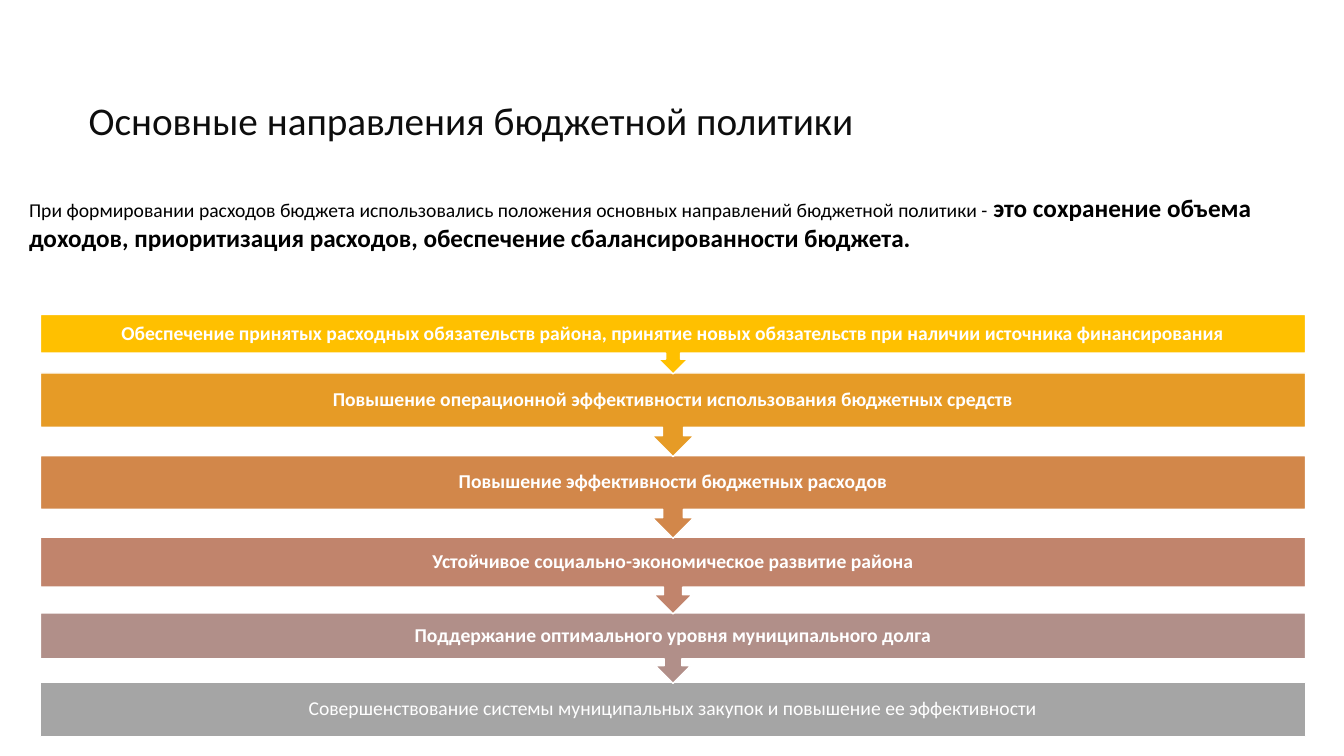
from pptx import Presentation
from pptx.dml.color import RGBColor
from pptx.enum.shapes import MSO_SHAPE
from pptx.enum.text import MSO_ANCHOR, MSO_AUTO_SIZE, PP_ALIGN
from pptx.util import Inches, Pt

TITLE = "Основные направления бюджетной политики"
INTRO = (
    "При формировании расходов бюджета использовались положения "
    "основных направлений бюджетной политики - "
)
GOALS = (
    "это сохранение объема доходов, приоритизация расходов, "
    "обеспечение сбалансированности бюджета."
)
STEPS = [
    ("Обеспечение принятых расходных обязательств района, принятие новых "
     "обязательств при наличии источника финансирования", 3.12, 0.59, "FFC000"),
    ("Повышение операционной эффективности использования бюджетных средств",
     3.7, 0.83, "E69B26"),
    ("Повышение эффективности бюджетных расходов", 4.52, 0.82, "D2874A"),
    ("Устойчивое социально-экономическое развитие района", 5.33, 0.76, "C1846C"),
    ("Поддержание оптимального уровня муниципального долга", 6.08, 0.7, "B18F89"),
]
LAST_STEP = (
    "Совершенствование системы муниципальных закупок и повышение ее эффективности",
    6.77, 0.54, "A5A5A5",
)
STEP_LEFT, STEP_WIDTH = 0.4, 12.55
CALLOUT_BODY_SHARE = 0.65


def color(hex_value):
    """Turn a hex string into a colour."""
    return RGBColor.from_string(hex_value)


class PolicySlide:
    """Holds the style and the current slide."""

    font_name = "Calibri"
    white, black, title_color = "FFFFFF", "000000", "0D0D0D"

    def __init__(self, presentation):
        """Add a title-only slide."""
        self.slide = presentation.slides.add_slide(presentation.slide_layouts[5])

    def style(self, font, size, hex_value, bold=False):
        """Apply the slide font to a paragraph or run."""
        font.name = self.font_name
        font.size = Pt(size)
        font.bold = bold
        font.color.rgb = color(hex_value)

    def title(self, text, left, top, width, height):
        """Place and format the title placeholder."""
        shape = self.slide.shapes.title
        shape.left, shape.top = Inches(left), Inches(top)
        shape.width, shape.height = Inches(width), Inches(height)
        frame = shape.text_frame
        frame.text = text
        frame.auto_size = MSO_AUTO_SIZE.NONE
        frame.vertical_anchor = MSO_ANCHOR.TOP
        paragraph = frame.paragraphs[0]
        paragraph.alignment = PP_ALIGN.CENTER
        self.style(paragraph.font, 28, self.title_color)

    def text_box(self, left, top, width, height):
        """Add a wrapping text box and return its frame."""
        shape = self.slide.shapes.add_textbox(
            Inches(left), Inches(top), Inches(width), Inches(height))
        shape.text_frame.word_wrap = True
        return shape.text_frame

    def intro(self, text, goals, left, top, width, height):
        """Add the opening sentence with its bold ending."""
        paragraph = self.text_box(left, top, width, height).paragraphs[0]
        for part, size, bold in ((text, 14, False), (goals, 18, True)):
            run = paragraph.add_run()
            run.text = part
            self.style(run.font, size, self.black, bold)

    def step(self, text, top, height, fill, last=False):
        """Add one bar of the chain, with a down arrow unless it is the last."""
        kind = MSO_SHAPE.RECTANGLE if last else MSO_SHAPE.UP_ARROW_CALLOUT
        shape = self.slide.shapes.add_shape(
            kind, Inches(STEP_LEFT), Inches(top), Inches(STEP_WIDTH), Inches(height))
        shape.rotation = 0 if last else 180
        shape.shadow.inherit = False
        shape.fill.solid()
        shape.fill.fore_color.rgb = color(fill)
        shape.line.color.rgb = color(self.white)
        shape.line.width = Pt(1)

        body_height = height if last else height * CALLOUT_BODY_SHARE
        frame = self.text_box(STEP_LEFT, top, STEP_WIDTH, body_height)
        frame.vertical_anchor = MSO_ANCHOR.MIDDLE
        frame.margin_left = frame.margin_right = Inches(0.11)
        frame.margin_top = frame.margin_bottom = Inches(0.11)
        paragraph = frame.paragraphs[0]
        paragraph.text = text
        paragraph.alignment = PP_ALIGN.CENTER
        paragraph.line_spacing = 0.9
        self.style(paragraph.font, 14, self.white, bold=not last)


def main():
    """Build and save the slide."""
    presentation = Presentation()
    presentation.slide_width = Inches(13.33)
    presentation.slide_height = Inches(7.5)

    policy = PolicySlide(presentation)
    policy.title(TITLE, 0.57, 0.91, 8.2, 0.45)
    policy.step(*LAST_STEP, last=True)
    for step in reversed(STEPS):
        policy.step(*step)
    policy.intro(INTRO, GOALS, 0.19, 1.86, 12.76, 0.71)

    presentation.save("out.pptx")


if __name__ == "__main__":
    main()
